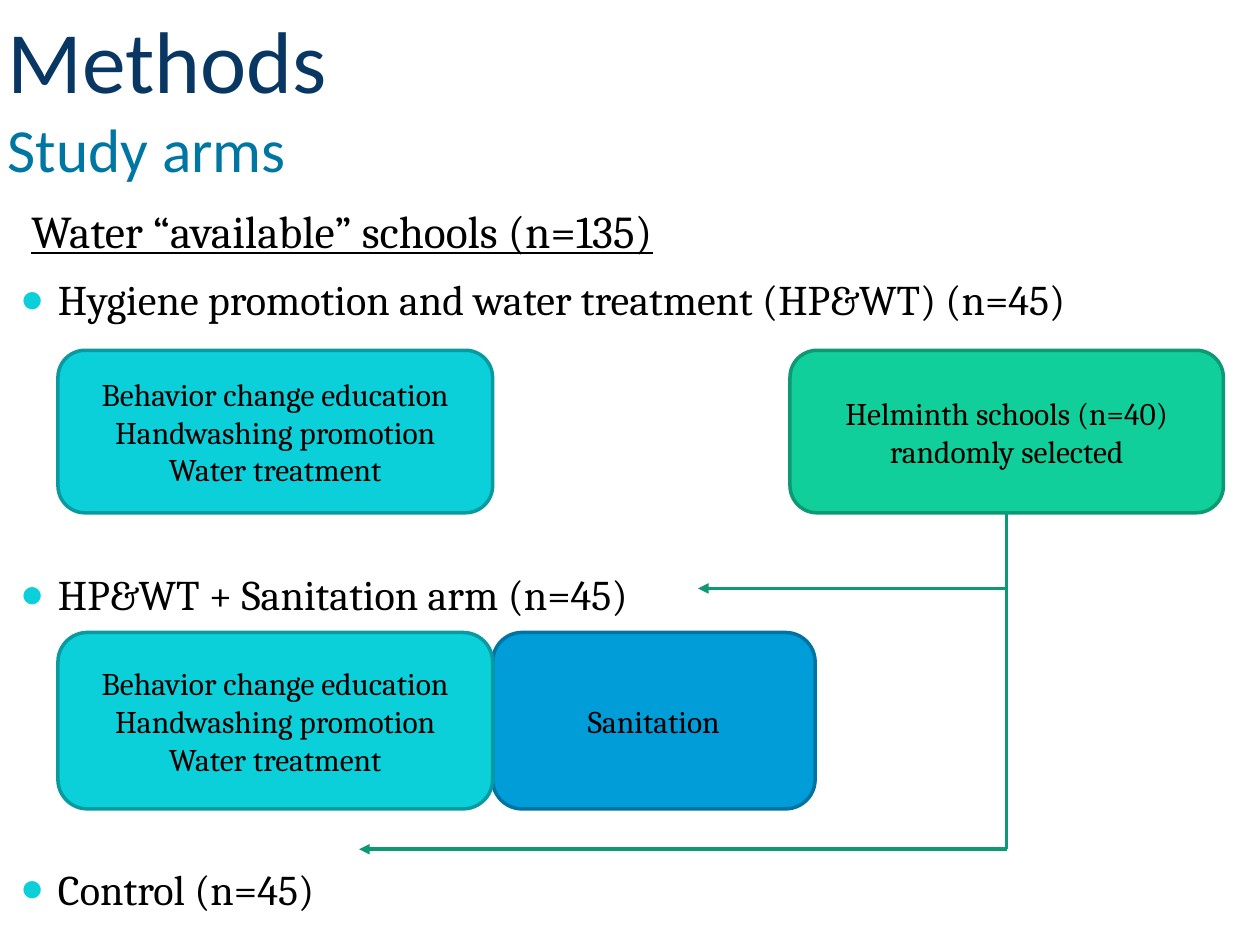
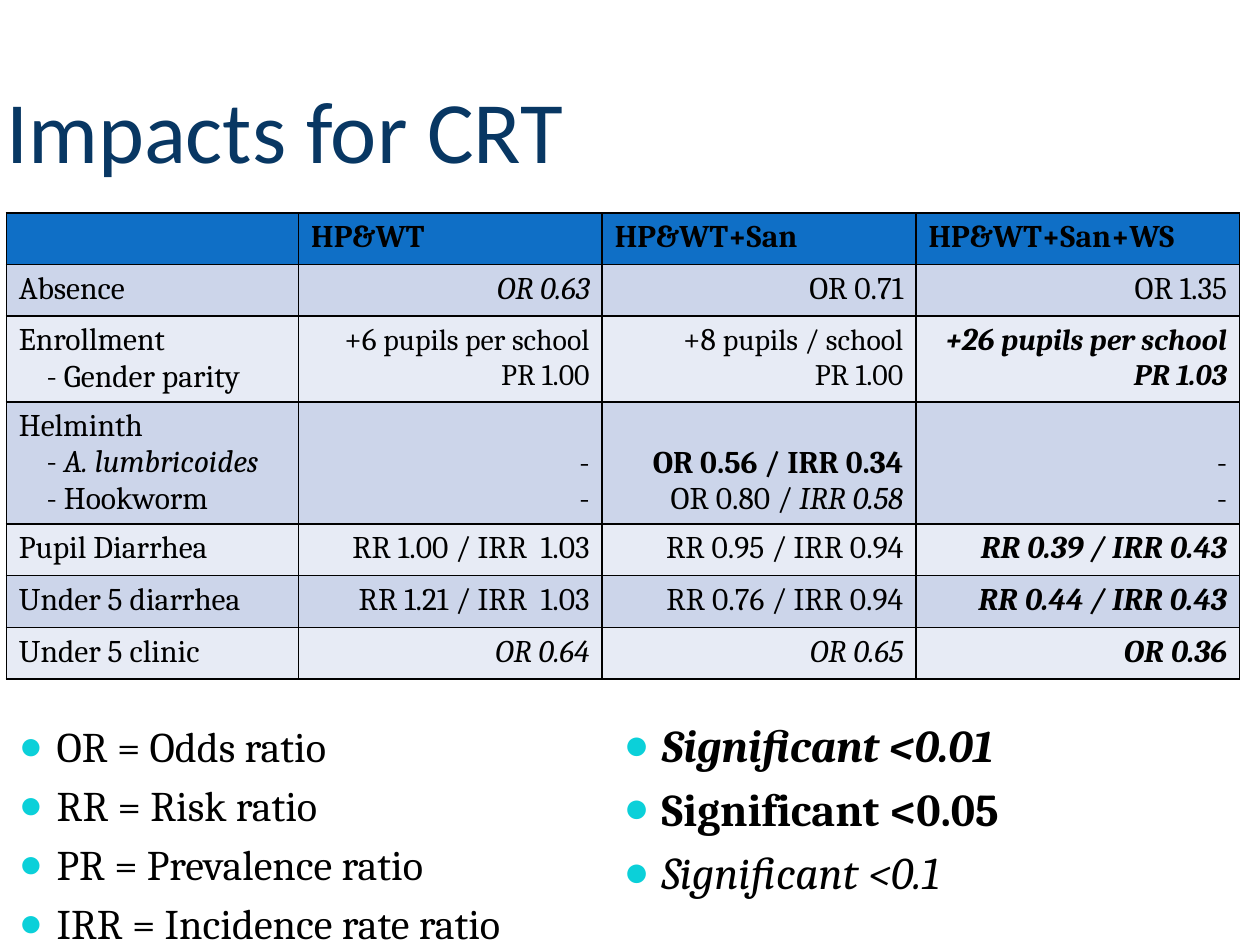
"""Build two slides on the study arms and impacts of a school trial."""
from dataclasses import dataclass
from typing import Optional

from lxml.etree import SubElement
from pptx import Presentation
from pptx.dml.color import RGBColor
from pptx.enum.shapes import MSO_CONNECTOR as Connector, MSO_SHAPE as Shape
from pptx.enum.text import MSO_ANCHOR as Anchor, MSO_AUTO_SIZE as AutoSize, PP_ALIGN as Align
from pptx.oxml import parse_xml
from pptx.oxml.ns import nsdecls, qn
from pptx.util import Inches, Pt

BLACK = RGBColor(0x00, 0x00, 0x00)
NAVY = RGBColor(0x08, 0x37, 0x63)
TEAL = RGBColor(0x00, 0x76, 0xA3)
CYAN = RGBColor(0x0B, 0xD0, 0xD9)
DARK_CYAN = RGBColor(0x08, 0x9A, 0xA1)
BLUE = RGBColor(0x00, 0x9D, 0xD9)
DARK_BLUE = RGBColor(0x00, 0x74, 0xA1)
GREEN = RGBColor(0x10, 0xCF, 0x9B)
DARK_GREEN = RGBColor(0x0C, 0x99, 0x73)
HEADER_FILL = RGBColor(0x0F, 0x6F, 0xC6)
BAND_FILLS = (RGBColor(0xCC, 0xD5, 0xEA), RGBColor(0xE7, 0xEB, 0xF5))

HEADING_FONT = "Calibri"
BODY_FONT = "Cambria"
TITLE_SIZE, SUBTITLE_SIZE = 50, 35
LIST_SIZE, LARGE_SIZE, SMALL_SIZE = 24.1, 26, 18
ARM_GAP = Pt(139.5)


@dataclass(frozen=True)
class Span:
    text: str
    bold: bool = False
    italic: bool = False
    size: float = SMALL_SIZE
    underline: bool = False
    font: str = BODY_FONT
    color: RGBColor = BLACK


@dataclass(frozen=True)
class Line:
    spans: tuple[Span, ...]
    indent: float = 0


@dataclass(frozen=True)
class Box:
    left: float
    top: float
    width: float
    height: float

    def lengths(self) -> tuple:
        return tuple(Inches(value) for value in (self.left, self.top, self.width, self.height))


@dataclass(frozen=True)
class Card:
    box: Box
    fill: RGBColor
    outline: RGBColor
    lines: tuple[str, ...]


def line(text: str, indent: float = 0, **style) -> Line:
    return Line((Span(text, **style),), indent)


PACKAGE_LINES = ("Behavior change education", "Handwashing promotion", "Water treatment")
CARDS = (
    Card(Box(0.46, 2.78, 3.45, 1.29), CYAN, DARK_CYAN, PACKAGE_LINES),
    Card(Box(3.91, 5.02, 2.56, 1.4), BLUE, DARK_BLUE, ("Sanitation",)),
    Card(Box(0.46, 5.02, 3.45, 1.4), CYAN, DARK_CYAN, PACKAGE_LINES),
)
HELMINTH_CARD = Card(Box(6.27, 2.78, 3.44, 1.29), GREEN, DARK_GREEN,
                     ("Helminth schools (n=40) randomly selected",))
TRUNK_X, TRUNK_TOP, TRUNK_BOTTOM = 7.99, 4.07, 6.74
BRANCHES = ((2.85, TRUNK_BOTTOM), (5.54, 4.67))
STUDY_ARMS = ("Hygiene promotion and water treatment (HP&WT) (n=45)",
              "HP&WT + Sanitation arm (n=45)", "Control (n=45)")

COLUMN_WIDTHS = (2.32, 2.41, 2.49, 2.57)
ROW_HEIGHTS = (0.41, 0.41, 0.68, 0.97, 0.41, 0.41, 0.41)
SUB_INDENT = 0.22
STRONG = {"bold": True, "italic": True}
NO_DATA = (line("-"), line("-"))


def enrollment(gain: str, unit: str, parity: str, **style) -> tuple[Line, ...]:
    return (Line((Span(gain, **style), Span(unit, size=17, **style))),
            line(parity, size=17, **style))


IMPACTS = (
    ((),) + tuple((line(arm, bold=True),) for arm in ("HP&WT", "HP&WT+San", "HP&WT+San+WS")),
    ((line("Absence"),), (line("OR 0.63", italic=True),), (line("OR 0.71"),), (line("OR 1.35"),)),
    ((line("Enrollment"), line("- Gender parity", SUB_INDENT)),
     enrollment("+6", " pupils per school", "PR 1.00"),
     enrollment("+8 ", "pupils / school", "PR 1.00"),
     enrollment("+26 ", "pupils per school", "PR 1.03", **STRONG)),
    ((line("Helminth"),
      Line((Span("- "), Span("A. lumbricoides", italic=True)), SUB_INDENT),
      line("- Hookworm", SUB_INDENT)),
     NO_DATA,
     (line("OR 0.56 / IRR 0.34", bold=True),
      Line((Span("OR 0.80 / "), Span("IRR 0.58", italic=True)))),
     NO_DATA),
    ((line("Pupil Diarrhea"),), (line("RR 1.00 / IRR  1.03"),),
     (line("RR 0.95 / IRR 0.94"),), (line("RR 0.39 / IRR 0.43", **STRONG),)),
    ((line("Under 5 diarrhea"),), (line("RR 1.21 / IRR  1.03"),),
     (line("RR 0.76 / IRR 0.94"),), (line("RR 0.44 / IRR 0.43", **STRONG),)),
    ((line("Under 5 clinic"),), (line("OR 0.64", italic=True),),
     (line("OR 0.65", italic=True),), (line("OR 0.36", **STRONG),)),
)
ABBREVIATIONS = ("OR = Odds ratio", "RR = Risk ratio", "PR = Prevalence ratio",
                 "IRR = Incidence rate ratio")
SIGNIFICANCE = (line("Significant <0.01", size=LARGE_SIZE, **STRONG),
                line("Significant <0.05", size=LARGE_SIZE, bold=True),
                line("Significant <0.1", size=LARGE_SIZE, italic=True))


def add_span(paragraph, span: Span) -> None:
    run = paragraph.add_run()
    run.text = span.text
    font = run.font
    font.name, font.size = span.font, Pt(span.size)
    font.bold, font.italic = span.bold, span.italic
    font.underline = span.underline
    font.color.rgb = span.color


def write_lines(frame, lines: tuple[Line, ...], align: Align = Align.LEFT) -> list:
    frame.word_wrap = True
    for index, content in enumerate(lines):
        paragraph = frame.paragraphs[0] if index == 0 else frame.add_paragraph()
        paragraph.alignment = align
        if content.indent:
            paragraph._p.get_or_add_pPr().set("marL", str(Inches(content.indent)))
        for span in content.spans:
            add_span(paragraph, span)
    return list(frame.paragraphs)


def place(shape, box: Box) -> None:
    shape.left, shape.top, shape.width, shape.height = box.lengths()


def set_title(slide, box: Box, anchor: Anchor, title: str, subtitle: str = "") -> None:
    shape = slide.shapes.title
    place(shape, box)
    frame = shape.text_frame
    frame.auto_size, frame.word_wrap = AutoSize.NONE, True
    frame.vertical_anchor = anchor
    frame.margin_left = frame.margin_right = frame.margin_bottom = 0
    frame.margin_top = Inches(0.05)
    paragraph = frame.paragraphs[0]
    paragraph.alignment = Align.LEFT
    add_span(paragraph, Span(title, size=TITLE_SIZE, font=HEADING_FONT, color=NAVY))
    if subtitle:
        paragraph.add_line_break()
        add_span(paragraph, Span(subtitle, size=SUBTITLE_SIZE, font=HEADING_FONT, color=TEAL))


def fill_list(shape, box: Box, lines: tuple[Line, ...], gap: Optional[Pt] = None) -> None:
    place(shape, box)
    shape.text_frame.auto_size = AutoSize.NONE
    for index, paragraph in enumerate(write_lines(shape.text_frame, lines)):
        if gap and index:
            paragraph.space_before = gap
        properties = paragraph._p.get_or_add_pPr()
        properties.set("marL", str(Inches(0.3)))
        properties.set("indent", str(-Inches(0.3)))
        color = SubElement(properties, qn("a:buClr"))
        SubElement(color, qn("a:srgbClr"), val=str(CYAN))
        SubElement(properties, qn("a:buSzPct"), val="95000")
        SubElement(properties, qn("a:buChar"), char="●")


def list_lines(texts: tuple[str, ...]) -> tuple[Line, ...]:
    return tuple(line(text, size=LIST_SIZE) for text in texts)


def add_card(slide, card: Card):
    shape = slide.shapes.add_shape(Shape.ROUNDED_RECTANGLE, *card.box.lengths())
    shape.shadow.inherit = False
    shape.fill.solid()
    shape.fill.fore_color.rgb = card.fill
    shape.line.color.rgb = card.outline
    shape.line.width = Pt(2)
    shape.text_frame.vertical_anchor = Anchor.MIDDLE
    write_lines(shape.text_frame, tuple(line(text) for text in card.lines), Align.CENTER)
    return shape


def add_line(slide, start: tuple[float, float], end: tuple[float, float], arrow: bool = False):
    points = (Inches(value) for value in start + end)
    connector = slide.shapes.add_connector(Connector.STRAIGHT, *points)
    connector.line.color.rgb = DARK_GREEN
    connector.line.width = Pt(2)
    if arrow:
        SubElement(connector.line._get_or_add_ln(), qn("a:tailEnd"), type="triangle")
    SubElement(connector._element.spPr, qn("a:effectLst"))
    return connector


def set_borders(cell) -> None:
    properties = cell._tc.get_or_add_tcPr()
    for index, side in enumerate(("lnL", "lnR", "lnT", "lnB")):
        properties.insert(index, parse_xml(
            f'<a:{side} {nsdecls("a")} w="{Pt(1)}"><a:solidFill>'
            f'<a:srgbClr val="{BLACK}"/></a:solidFill></a:{side}>'))


def add_impact_table(slide) -> None:
    box = Box(0.05, 1.69, sum(COLUMN_WIDTHS), sum(ROW_HEIGHTS))
    table = slide.shapes.add_table(len(ROW_HEIGHTS), len(COLUMN_WIDTHS), *box.lengths()).table
    for column, width in zip(table.columns, COLUMN_WIDTHS):
        column.width = Inches(width)
    for row, height in zip(table.rows, ROW_HEIGHTS):
        row.height = Inches(height)
    for row_index, row in enumerate(IMPACTS):
        for column_index, lines in enumerate(row):
            cell = table.cell(row_index, column_index)
            cell.fill.solid()
            cell.fill.fore_color.rgb = BAND_FILLS[(row_index - 1) % 2] if row_index else HEADER_FILL
            set_borders(cell)
            if len(lines) < len(row[0]):
                cell.vertical_anchor = Anchor.BOTTOM
            is_value = row_index > 0 and column_index > 0
            write_lines(cell.text_frame, lines, Align.RIGHT if is_value else Align.LEFT)


def build_methods(presentation) -> None:
    slide = presentation.slides.add_slide(presentation.slide_layouts[1])
    fill_list(slide.placeholders[1], Box(0.06, 2.12, 9.65, 5.1), list_lines(STUDY_ARMS), ARM_GAP)
    heading = slide.shapes.add_textbox(*Box(0.15, 1.56, 9.69, 0.56).lengths())
    heading_line = line("Water “available” schools (n=135)", size=LARGE_SIZE, underline=True)
    write_lines(heading.text_frame, (heading_line,))[0].space_before = Pt(5.2)
    set_title(slide, Box(0.06, 0, 9, 1.71), Anchor.TOP, "Methods ", "Study arms")
    for card in CARDS:
        add_card(slide, card)
    helminth = add_card(slide, HELMINTH_CARD)
    for end_x, y in BRANCHES:
        add_line(slide, (TRUNK_X, y), (end_x, y), arrow=True)
    trunk = add_line(slide, (TRUNK_X, TRUNK_TOP), (TRUNK_X, TRUNK_BOTTOM))
    trunk.begin_connect(helminth, 2)


def build_impacts(presentation) -> None:
    slide = presentation.slides.add_slide(presentation.slide_layouts[3])
    set_title(slide, Box(0.05, 0, 9, 1.44), Anchor.BOTTOM, "Impacts for CRT")
    add_impact_table(slide)
    fill_list(slide.placeholders[1], Box(0.05, 5.67, 4.8, 1.72), list_lines(ABBREVIATIONS))
    fill_list(slide.placeholders[2], Box(4.85, 5.64, 4.8, 1.72), SIGNIFICANCE)


def main() -> None:
    presentation = Presentation()
    presentation.slide_width, presentation.slide_height = Inches(10), Inches(7.5)
    build_methods(presentation)
    build_impacts(presentation)
    presentation.save("out.pptx")


if __name__ == "__main__":
    main()
